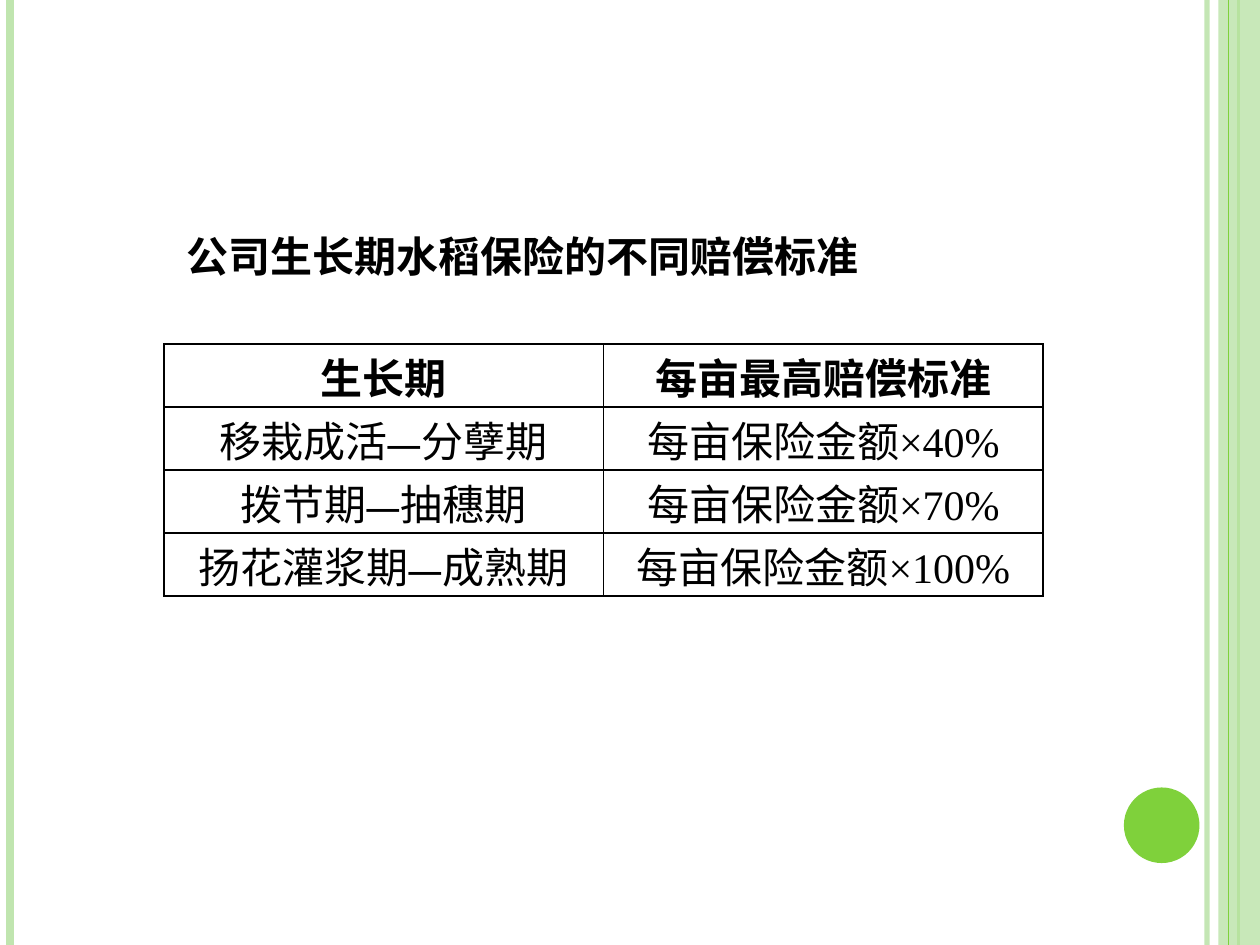
from dataclasses import dataclass
from lxml import etree
from pptx import Presentation
from pptx.dml.color import RGBColor
from pptx.enum.shapes import MSO_CONNECTOR, MSO_SHAPE
from pptx.enum.text import MSO_ANCHOR, MSO_AUTO_SIZE, PP_ALIGN
from pptx.oxml.ns import qn
from pptx.util import Inches, Pt

STRAIGHT = MSO_CONNECTOR.STRAIGHT
RECT, OVAL = MSO_SHAPE.RECTANGLE, MSO_SHAPE.OVAL
MIDDLE, BOTTOM = MSO_ANCHOR.MIDDLE, MSO_ANCHOR.BOTTOM
CENTER = PP_ALIGN.CENTER
FIT = MSO_AUTO_SIZE.SHAPE_TO_FIT_TEXT


@dataclass
class Theme:
    pale: str = "C0E5AF"
    green: str = "7FD13B"
    ink: str = "000000"
    size: int = 24
    han: str = "Noto Sans CJK SC"
    dash: str = "League Spartan"
    num: str = "Times New Roman"


theme = Theme()


def add_run(para, text, face, bold):
    run = para.add_run()
    run.text = text
    font = run.font
    style = {"size": Pt(theme.size), "bold": bold, "name": face}
    for key, value in style.items():
        setattr(font, key, value)
    font.color.rgb = RGBColor.from_string(theme.ink)
    props = run._r.get_or_add_rPr()
    etree.SubElement(props, qn("a:ea")).set("typeface", face)


def set_alpha(part, percent):
    for color in part.iter(qn("a:srgbClr")):
        etree.SubElement(color, qn("a:alpha")).set("val", str(percent * 1000))


deck = Presentation()
deck.slide_width, deck.slide_height = Inches(10), Inches(7.5)
slide = deck.slides.add_slide(deck.slide_layouts[6])
shapes = slide.shapes

# Side stripes, with the band between them: left, width, colour, opacity
bars = [
    ("line", 9.58, 3, theme.pale, 93),
    ("line", 0.08, 4.5, theme.pale, 100),
    ("line", 9.83, 1.5, theme.green, 100),
    ("band", 9.67, 0.33, theme.pale, 87),
    ("line", 9.75, 0.75, theme.green, 100),
]
for kind, left, width, color, alpha in bars:
    x = Inches(left)
    if kind == "line":
        bar = shapes.add_connector(STRAIGHT, x, 0, x, Inches(7.5))
        bar.line.width = Pt(width)
        paint = bar.line.fill
        etree.SubElement(bar._element.spPr, qn("a:effectLst"))
    else:
        bar = shapes.add_shape(RECT, x, 0, Inches(width), Inches(7.5))
        bar.shadow.inherit = False
        bar.line.fill.background()
        paint = bar.fill
    paint.solid()
    paint.fore_color.rgb = RGBColor.from_string(color)
    if alpha < 100:
        set_alpha(bar._element.spPr, alpha)

# Corner disc
disc = shapes.add_shape(OVAL, Inches(8.92), Inches(6.25), Inches(0.6), Inches(0.6))
disc.shadow.inherit = False
disc.fill.solid()
disc.fill.fore_color.rgb = RGBColor.from_string(theme.green)
disc.line.fill.background()

# Heading
box = shapes.add_textbox(Inches(1.38), Inches(1.78), Inches(5.56), Inches(0.5))
frame = box.text_frame
layout = {"word_wrap": False, "auto_size": FIT, "vertical_anchor": MIDDLE}
for key, value in layout.items():
    setattr(frame, key, value)
add_run(frame.paragraphs[0], "公司生长期水稻保险的不同赔偿标准", theme.han, True)

# Payout table: each cell is a list of (text, font)
rows = [[[("生长期", theme.han)], [("每亩最高赔偿标准", theme.han)]]]
stages = [
    ("移栽成活", "分孽期", 40),
    ("拨节期", "抽穗期", 70),
    ("扬花灌浆期", "成熟期", 100),
]
for start, end, rate in stages:
    rows.append([
        [(start, theme.han), ("—", theme.dash), (end, theme.han)],
        [("每亩保险金额", theme.han), (f"×{rate}%", theme.num)],
    ])

holder = shapes.add_table(
    len(rows), 2, Inches(1.3), Inches(2.73), Inches(6.98), Inches(2))
table = holder.table
table.first_row = table.horz_banding = False
for col in table.columns:
    col.width = Inches(3.49)

pad = {"margin_top": Inches(0.01), "margin_bottom": 0, "vertical_anchor": BOTTOM}
for i, row in enumerate(rows):
    table.rows[i].height = Inches(0.5)
    for j, parts in enumerate(row):
        cell = table.cell(i, j)
        for key, value in pad.items():
            setattr(cell, key, value)
        para = cell.text_frame.paragraphs[0]
        para.alignment = CENTER
        for text, face in parts:
            add_run(para, text, face, i == 0)
        # Borders come before the fill in the cell properties
        props = cell._tc.get_or_add_tcPr()
        for side in ("lnL", "lnR", "lnT", "lnB"):
            edge = etree.SubElement(props, qn(f"a:{side}"), w=str(Pt(1)))
            solid = etree.SubElement(edge, qn("a:solidFill"))
            etree.SubElement(solid, qn("a:srgbClr"), val=theme.ink)
        cell.fill.background()

deck.save("out.pptx")
